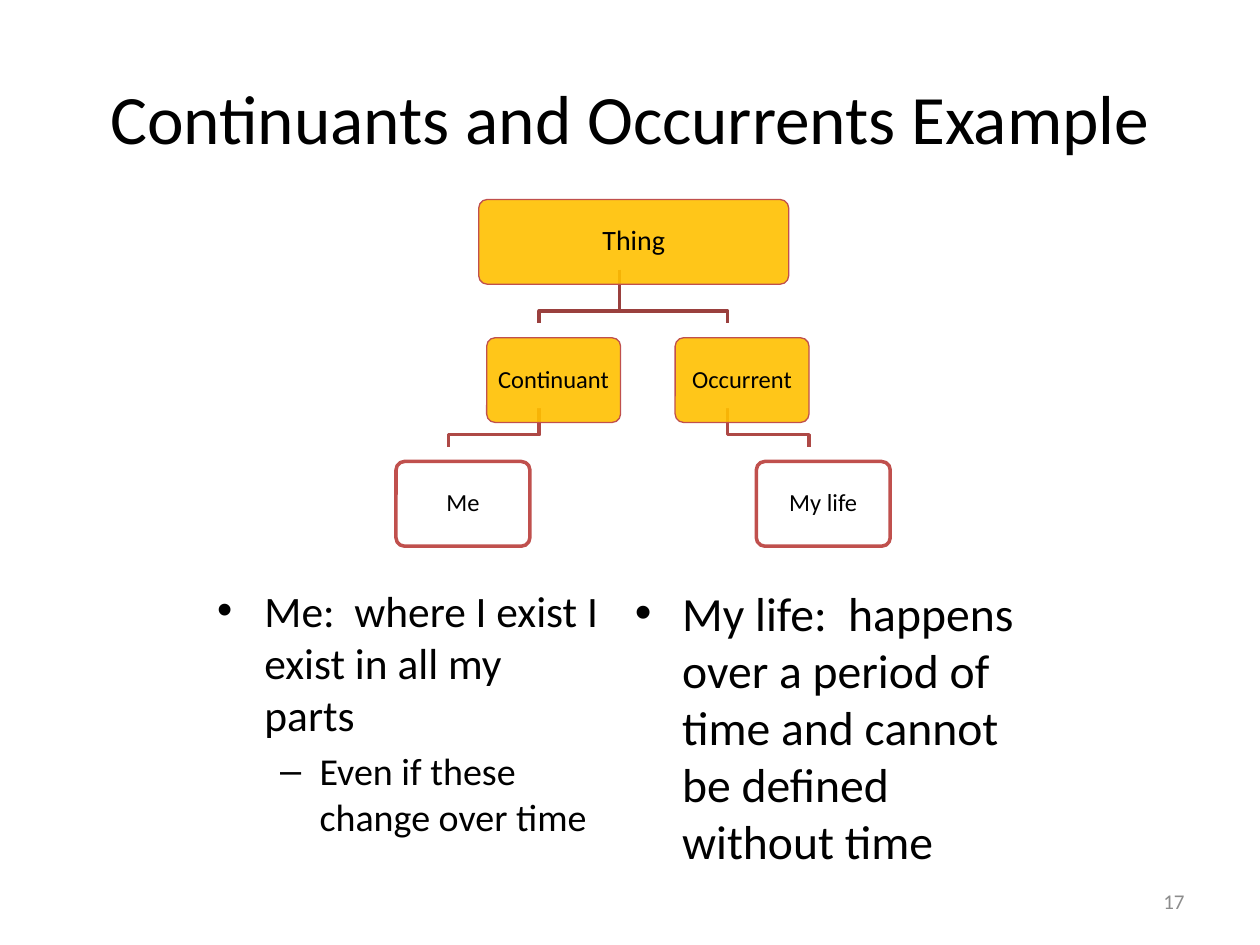
from dataclasses import dataclass

from lxml import etree
from pptx import Presentation
from pptx.dml.color import RGBColor
from pptx.enum.shapes import MSO_SHAPE
from pptx.enum.text import MSO_ANCHOR, PP_ALIGN
from pptx.oxml.ns import qn
from pptx.util import Pt

ROUND = MSO_SHAPE.ROUNDED_RECTANGLE
TOP, MIDDLE = MSO_ANCHOR.TOP, MSO_ANCHOR.MIDDLE
CENTER, RIGHT = PP_ALIGN.CENTER, PP_ALIGN.RIGHT


@dataclass(frozen=True)
class Theme:
    font: str = "Calibri"
    ink: str = "000000"
    grey: str = "8C8C8C"
    white: str = "FFFFFF"
    gold: str = "FFC000"
    edge: str = "C0504D"
    link_one: str = "9A403E"
    link_two: str = "AE4946"
    title: float = 39.6
    root: float = 16
    node: float = 14
    left: float = 24.8
    sub: float = 21.7
    right: float = 27.2
    page: float = 12


THEME = Theme()
SHIFT = 8.2  # offset between a box and the white card behind it
DROP = 7.1  # height of the last leg of a link
BOX_H = 48.4
NODE_W = 76.5
INSET = 3


def rgb(code):
    return RGBColor.from_string(code)


def add_run(para, text, size, color=THEME.ink):
    run = para.add_run()
    run.text = text
    run.font.name = THEME.font
    run.font.size = Pt(size)
    run.font.color.rgb = rgb(color)


def add_text(slide, x, y, w, h, anchor=TOP):
    frame = slide.shapes.add_textbox(Pt(x), Pt(y), Pt(w), Pt(h)).text_frame
    frame.word_wrap = True
    frame.vertical_anchor = anchor
    return frame


def add_line(slide, area, text, size, align, color=THEME.ink):
    para = add_text(slide, *area, MIDDLE).paragraphs[0]
    para.alignment = align
    add_run(para, text, size, color)


def add_bullet(para, mark, text, size, margin, hang, level=0):
    para.level = level
    para.space_before = Pt(size * 0.2)
    props = para._p.get_or_add_pPr()
    props.set("marL", str(Pt(margin)))
    props.set("indent", str(-Pt(hang)))
    etree.SubElement(props, qn("a:buFont")).set("typeface", "Arial")
    etree.SubElement(props, qn("a:buChar")).set("char", mark)
    add_run(para, text, size)


def add_card(slide, x, y, w, fill, edge=None, width=0.75, alpha=None):
    card = slide.shapes.add_shape(ROUND, Pt(x), Pt(y), Pt(w), Pt(BOX_H))
    card.shadow.inherit = False
    card.adjustments[0] = 0.1
    card.fill.solid()
    card.fill.fore_color.rgb = rgb(fill)
    if alpha:
        color = card.fill._xPr.find(".//" + qn("a:srgbClr"))
        etree.SubElement(color, qn("a:alpha")).set("val", str(alpha * 1000))
    if edge:
        card.line.color.rgb = rgb(edge)
        card.line.width = Pt(width)
    else:
        card.line.fill.background()
    return card


def add_node(slide, text, x, y, w, size, leaf=False, back=True):
    if back:
        add_card(slide, x - SHIFT, y - SHIFT, w, THEME.white)
    if leaf:
        card = add_card(slide, x, y, w, THEME.white, THEME.edge, 2)
    else:
        card = add_card(slide, x, y, w, THEME.gold, THEME.edge, 0.75, 90)
    frame = card.text_frame
    frame.word_wrap = True
    frame.vertical_anchor = MIDDLE
    frame.margin_left = frame.margin_right = Pt(INSET)
    frame.margin_top = frame.margin_bottom = Pt(INSET)
    para = frame.paragraphs[0]
    para.alignment = CENTER
    para.line_spacing = 0.9
    add_run(para, text, size)


def add_link(slide, upper, lower, color):
    # Links join the cards behind the boxes, bottom centre to top centre
    (ax, ay, aw), (bx, by, bw) = upper, lower
    start, end = ax + aw / 2 - SHIFT, bx + bw / 2 - SHIFT
    head, foot = ay + BOX_H - SHIFT, by - SHIFT
    bend = foot - DROP
    path = slide.shapes.build_freeform(Pt(start), Pt(head))
    path.add_line_segments(
        [(Pt(start), Pt(bend)), (Pt(end), Pt(bend)), (Pt(end), Pt(foot))],
        close=False)
    link = path.convert_to_shape()
    link.shadow.inherit = False
    link.fill.background()
    link.line.color.rgb = rgb(color)
    link.line.width = Pt(2)


def add_tree(slide):
    # Each place is left, top, width
    thing = (273.6, 114, 177.1)
    kinds = [("Continuant", (278.1, 193, NODE_W)),
             ("Occurrent", (385.8, 193, NODE_W))]
    cases = [("Me", (226.3, 263.7, NODE_W)),
             ("My life", (432.2, 263.7, NODE_W))]
    for (_, kind), (_, case) in zip(kinds, cases):
        add_link(slide, kind, case, THEME.link_two)
        add_link(slide, thing, kind, THEME.link_one)
    add_node(slide, "Thing", *thing, THEME.root, back=False)
    for name, place in kinds:
        add_node(slide, name, *place, THEME.node)
    for name, place in cases:
        add_node(slide, name, *place, THEME.node, leaf=True)


def add_notes(slide):
    left = add_text(slide, 117, 330, 234, 152.6)
    add_bullet(left.paragraphs[0], "•",
               "Me:  where I exist I exist in all my parts",
               THEME.left, 27, 27)
    add_bullet(left.add_paragraph(), "–", "Even if these change over time",
               THEME.sub, 58.5, 22.5, 1)
    right = add_text(slide, 355.7, 330, 234, 138.2)
    add_bullet(right.paragraphs[0], "•",
               "My life:  happens over a period of time and cannot be "
               "defined without time", THEME.right, 27, 27)


def main():
    deck = Presentation()
    deck.slide_width, deck.slide_height = Pt(720), Pt(540)
    slide = deck.slides.add_slide(deck.slide_layouts[6])
    # Title
    add_line(slide, (36, 21.6, 648, 90),
             "Continuants and Occurrents Example", THEME.title, CENTER)
    # Tree and the text below it
    add_tree(slide)
    add_notes(slide)
    # Page number
    add_line(slide, (516, 500.5, 168, 28.8), "17", THEME.page, RIGHT,
             THEME.grey)
    deck.save("out.pptx")


if __name__ == "__main__":
    main()
